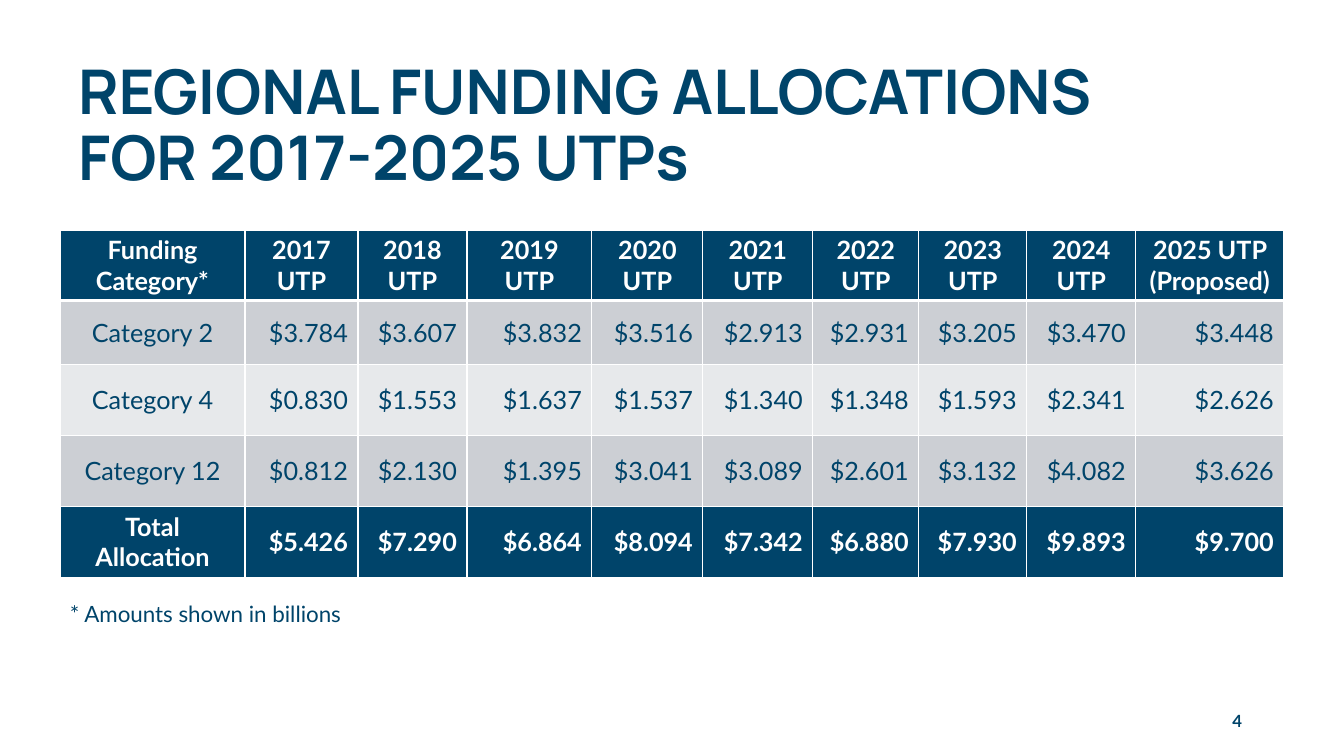
from lxml import etree
from pptx import Presentation
from pptx.dml.color import RGBColor
from pptx.enum.text import MSO_ANCHOR, PP_ALIGN
from pptx.oxml.ns import qn
from pptx.util import Pt

PX = 914400 / 100.8
LEFT, MID, RIGHT = PP_ALIGN.LEFT, PP_ALIGN.CENTER, PP_ALIGN.RIGHT
CENTER = MSO_ANCHOR.MIDDLE
HEX = {"navy": "00446A", "white": "FFFFFF", "dark": "CCCFD4", "light": "E7E9EB"}

HEAD = ["Funding Category*"] + [f"{year} UTP" for year in range(2017, 2025)]
HEAD[3] = "2019\nUTP"
HEAD.append("2025 UTP (Proposed)")
DATA = [
    ("Category 2", 3.784, 3.607, 3.832, 3.516, 2.913, 2.931, 3.205, 3.470, 3.448),
    ("Category 4", 0.830, 1.553, 1.637, 1.537, 1.340, 1.348, 1.593, 2.341, 2.626),
    ("Category 12", 0.812, 2.130, 1.395, 3.041, 3.089, 2.601, 3.132, 4.082, 3.626),
    ("Total Allocation", 5.426, 7.290, 6.864, 8.094, 7.342, 6.880, 7.930, 9.893, 9.700),
]
FILLS = ["navy", "dark", "light", "dark", "navy"]
COLS = [185, 113, 109, 125, 111, 110, 106, 108, 109, 148]
ROWS = [70, 64, 71, 71, 71]


def px(n):
    return round(n * PX)


def place(shape, box):
    for name, n in zip(("left", "top", "width", "height"), box):
        setattr(shape, name, px(n))


def style(frame, align, color, **font):
    for para in frame.paragraphs:
        para.alignment = align
        for run in para.runs:
            run.font.color.rgb = RGBColor.from_string(HEX[color])
            for name, value in font.items():
                setattr(run.font, name, value)


def border(cell, side, width):
    line = etree.SubElement(cell._tc.get_or_add_tcPr(), qn(f"a:ln{side}"), w=str(Pt(width)))
    fill = etree.SubElement(line, qn("a:solidFill"))
    etree.SubElement(fill, qn("a:srgbClr"), val=HEX["white"])


def add_title(slide, box, text):
    title = slide.shapes.title
    place(title, box)
    frame = title.text_frame
    frame.text = text
    frame.word_wrap = True
    frame.vertical_anchor = CENTER
    frame.paragraphs[0].line_spacing = 0.9
    style(frame, LEFT, "navy", name="Manrope", size=Pt(44), bold=True)


def add_label(slide, box, text, align, size, bold=False):
    frame = slide.shapes.add_textbox(*map(px, box)).text_frame
    frame.text = text
    frame.word_wrap = True
    frame.vertical_anchor = CENTER
    style(frame, align, "navy", name="Lato", size=Pt(size), bold=bold)


def add_grid(slide, left, top):
    """Draw the funding table; its size follows from COLS and ROWS."""
    box = (left, top, sum(COLS), sum(ROWS))
    table = slide.shapes.add_table(len(ROWS), len(COLS), *map(px, box)).table
    for col, width in zip(table.columns, COLS):
        col.width = px(width)
    for row, height in zip(table.rows, ROWS):
        row.height = px(height)
    lines = [HEAD] + [[name] + [f"${n:.3f}" for n in nums] for name, *nums in DATA]
    for r, (texts, fill) in enumerate(zip(lines, FILLS)):
        strong = fill == "navy"
        for c, text in enumerate(texts):
            cell = table.cell(r, c)
            cell.text = text
            cell.vertical_anchor = CENTER
            style(cell.text_frame, MID if r == 0 or c == 0 else RIGHT,
                  "white" if strong else "navy",
                  name="Lato", size=Pt(18), bold=strong)
            for side in "LRTB":
                thick = (r, side) in ((0, "B"), (1, "T"))
                border(cell, side, 3 if thick else 1)
            cell.fill.solid()
            cell.fill.fore_color.rgb = RGBColor.from_string(HEX[fill])


def main():
    deck = Presentation()
    deck.slide_width, deck.slide_height = px(1344), px(756)
    slide = deck.slides.add_slide(deck.slide_layouts[5])
    add_title(slide, (68, 53, 1089, 149),
              "REGIONAL FUNDING ALLOCATIONS FOR 2017-2025 UTPs")
    add_grid(slide, 60, 230)
    add_label(slide, (60, 600, 520, 28), "* Amounts shown in billions", LEFT, 16)
    add_label(slide, (950, 701, 302, 40), "4", RIGHT, 12, True)
    deck.save("out.pptx")


if __name__ == "__main__":
    main()
